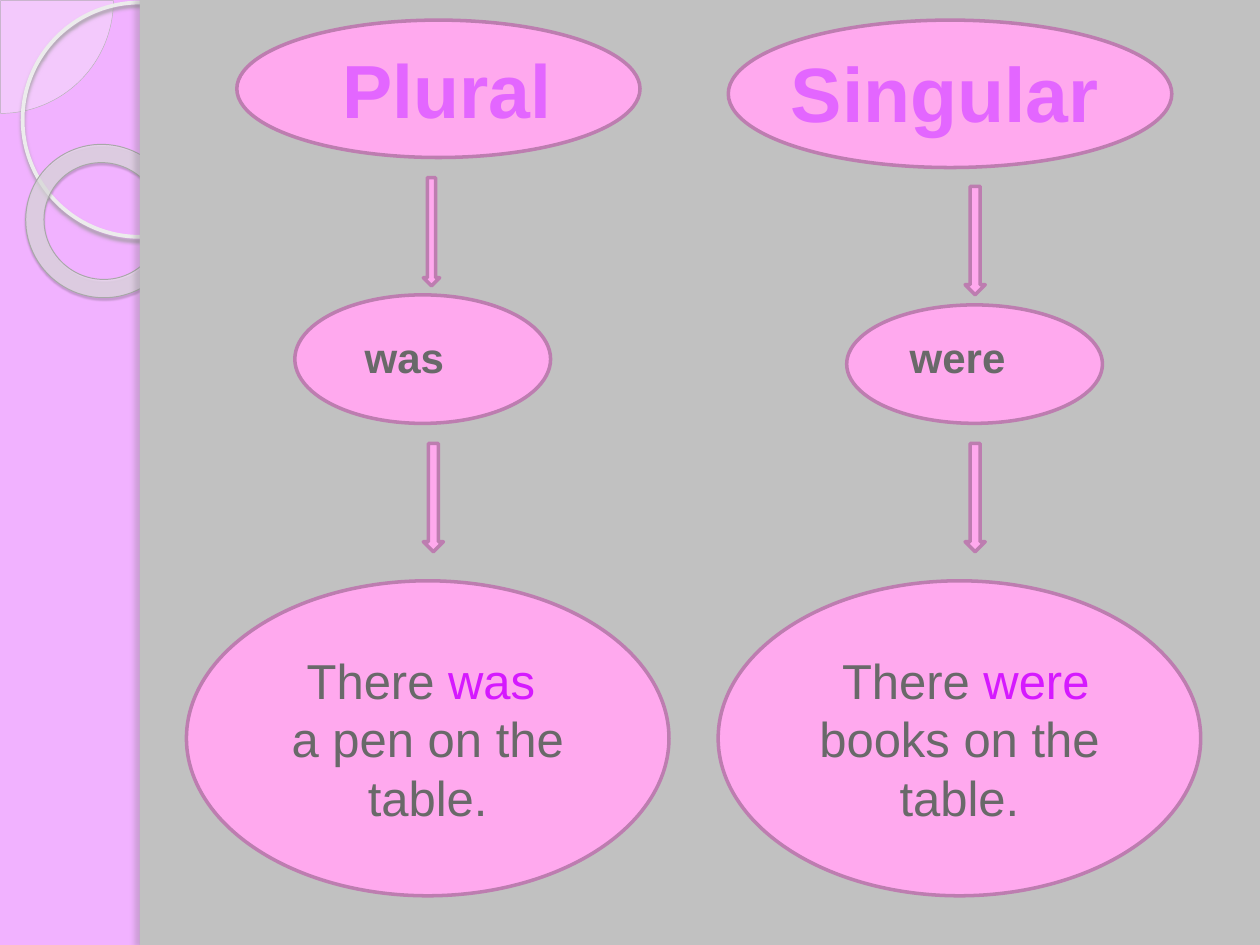
from lxml import etree
from pptx import Presentation
from pptx.dml.color import RGBColor
from pptx.enum.shapes import MSO_SHAPE
from pptx.enum.text import MSO_ANCHOR, MSO_AUTO_SIZE, PP_ALIGN
from pptx.oxml.ns import qn
from pptx.util import Inches, Pt

OVAL = MSO_SHAPE.OVAL
RECT = MSO_SHAPE.RECTANGLE
PIE = MSO_SHAPE.PIE
RING = MSO_SHAPE.DONUT
ARROW = MSO_SHAPE.DOWN_ARROW
CENTER = PP_ALIGN.CENTER
MIDDLE = MSO_ANCHOR.MIDDLE
TOP = MSO_ANCHOR.TOP
FIXED = MSO_AUTO_SIZE.NONE

LILAC = RGBColor(0xF1, 0xB2, 0xFF)
PANEL = RGBColor(0xC1, 0xC1, 0xC1)
PINK = RGBColor(0xFF, 0xA9, 0xEE)
PLUM = RGBColor(0xBD, 0x7D, 0xB0)
GRAY = RGBColor(0x69, 0x69, 0x69)
VIOLET = RGBColor(0xE3, 0x66, 0xFF)
PURPLE = RGBColor(0xD5, 0x19, 0xFF)
WHITE = RGBColor(0xF8, 0xF8, 0xF8)
PALE = RGBColor(0xEC, 0xEC, 0xEC)
SILVER = RGBColor(0xE6, 0xE6, 0xE6)
EDGE = RGBColor(0xB4, 0xB4, 0xB4)
RIM = RGBColor(0xA8, 0xA8, 0xA8)


def write(frame, lines, size=28, bold=False, color=GRAY, anchor=MIDDLE):
    frame.word_wrap = True
    frame.auto_size = FIXED
    frame.vertical_anchor = anchor
    for i, line in enumerate(lines):
        para = frame.add_paragraph() if i else frame.paragraphs[0]
        para.alignment = CENTER
        for text, tint in line:
            run = para.add_run()
            run.text = text
            font = run.font
            font.name = "Arial"
            font.size = Pt(size)
            font.bold = bold
            font.color.rgb = tint or color


class Deck:
    def __init__(self):
        self.file = Presentation()
        self.file.slide_width = Inches(10)
        self.file.slide_height = Inches(7.5)
        self.slide = self.file.slides.add_slide(self.file.slide_layouts[5])
        fill = self.slide.background.fill
        fill.solid()
        fill.fore_color.rgb = LILAC

    def shape(self, kind, box, fill=PINK, line=PLUM, width=2, alpha=None):
        item = self.slide.shapes.add_shape(kind, *map(Inches, box))
        item.shadow.inherit = False
        if fill is None:
            item.fill.background()
        else:
            item.fill.solid()
            item.fill.fore_color.rgb = fill
        if line is None:
            item.line.fill.background()
        else:
            item.line.color.rgb = line
            item.line.width = Pt(width)
        if alpha:
            tint = item._element.spPr.find(qn("a:solidFill"))[0]
            etree.SubElement(tint, qn("a:alpha"), val=str(alpha * 1000))
        return item

    def shade(self, item, color, alpha, blur, dist, angle):
        effect = item._element.spPr.find(qn("a:effectLst"))
        outer = etree.SubElement(
            effect, qn("a:outerShdw"), blurRad=str(Pt(blur)),
            dist=str(Pt(dist)), dir=str(angle * 60000), rotWithShape="0")
        tint = etree.SubElement(outer, qn("a:srgbClr"), val=color)
        etree.SubElement(tint, qn("a:alpha"), val=str(alpha * 1000))

    def title(self, text, box, **style):
        item = self.slide.shapes.title
        item.left, item.top, item.width, item.height = map(Inches, box)
        write(item.text_frame, [[(text, None)]], **style)
        self.slide.shapes._spTree.append(item._element)

    def label(self, text, box, **style):
        item = self.slide.shapes.add_textbox(*map(Inches, box))
        write(item.text_frame, [[(text, None)]], anchor=TOP, **style)

    def decor(self):
        pie = self.shape(PIE, (-0.89, -0.89, 1.79, 1.79), WHITE, EDGE, 0.25, 33)
        pie.adjustments[0] = 0
        pie.adjustments[1] = 54
        hoop = self.shape(OVAL, (0.18, 0.02, 1.86, 1.86), None, PALE, 2.15)
        self.shade(hoop, "9B9B9B", 85, 2, 2, 90)
        ring = self.shape(RING, (0.2, 1.15, 1.23, 1.21), SILVER, RIM, 0.58, 65)
        ring.adjustments[0] = 0.12
        ring.rotation = 38.6
        self.shade(ring, "4D4D4D", 35, 1, 1.2, 75)
        self.shape(RECT, (1.11, 0, 8.89, 7.5), PANEL, None)
        strip = self.shape(RECT, (1.11, 0, 0.08, 7.5), PANEL, None)
        self.shade(strip, "686868", 25, 3, 3, 180)


def main():
    deck = Deck()
    deck.decor()
    notes = (
        (5.7, [[(" There ", None), ("were", PURPLE),
                (" books on the table.", None)]]),
        (1.48, [[("There ", None), ("was ", PURPLE)],
                [("a pen on the table.", None)]]),
    )
    for left, lines in notes:
        item = deck.shape(OVAL, (left, 4.61, 3.83, 2.5))
        write(item.text_frame, lines)
    for box in ((2.34, 2.34, 2.03, 1.02), (6.72, 2.42, 2.03, 0.94),
                (1.88, 0.16, 3.2, 1.09), (5.78, 0.16, 3.52, 1.17)):
        deck.shape(OVAL, box)
    deck.title("Plural", (1.56, 0.23, 3.98, 0.95),
               size=43, bold=True, color=VIOLET)
    deck.label("Singular", (5.47, 0.31, 4.06, 0.84),
               size=44, bold=True, color=VIOLET)
    for text, left in (("was", 2.46), ("were", 6.85)):
        deck.label(text, (left, 2.58, 1.5, 0.51), size=24, bold=True)
    for left, top, width in ((3.36, 1.41, 0.13), (7.66, 1.48, 0.16),
                             (3.36, 3.52, 0.16), (7.66, 3.52, 0.16)):
        deck.shape(ARROW, (left, top, width, 0.86))
    deck.file.save("out.pptx")


if __name__ == "__main__":
    main()
